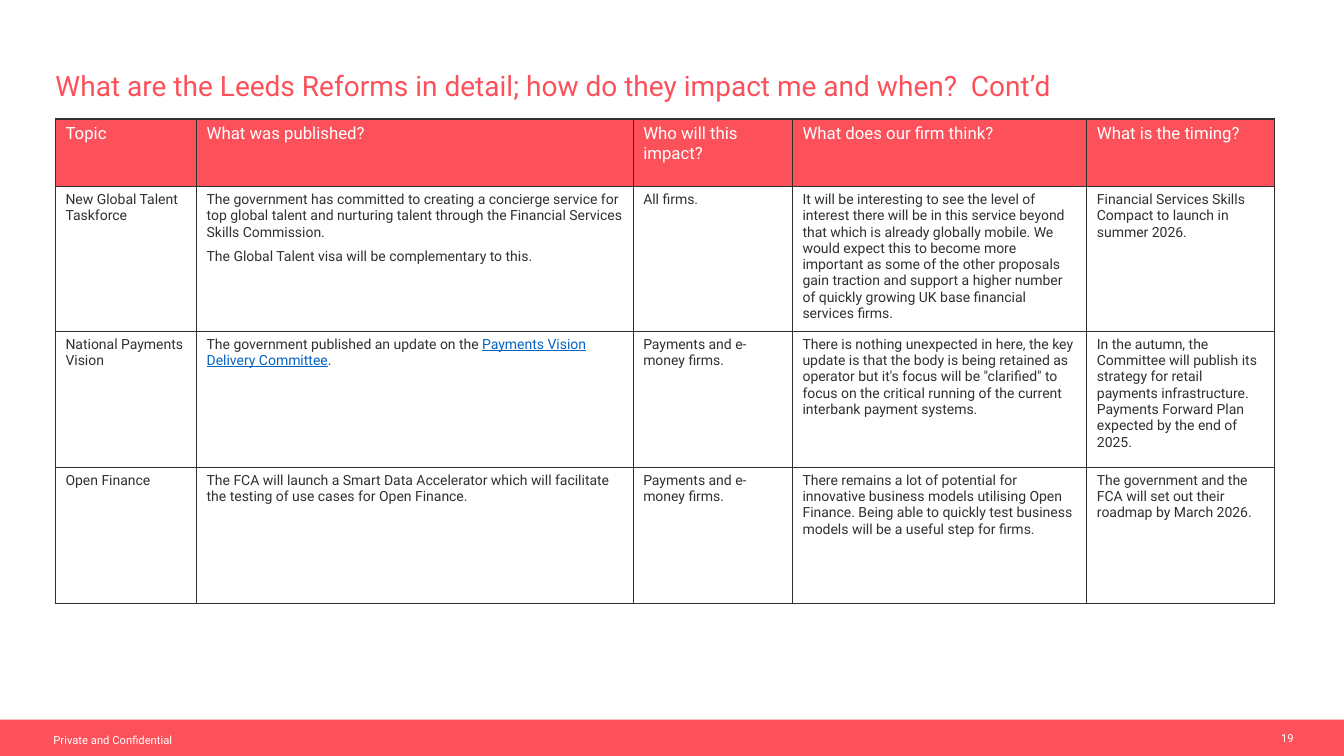
from lxml import etree
from pptx import Presentation
from pptx import util as u
from pptx.dml.color import RGBColor
from pptx.enum import shapes, text
from pptx.oxml import ns

CORAL = RGBColor(0xFC, 0x51, 0x5B)
WHITE = RGBColor(0xFF, 0xFF, 0xFF)
INK = RGBColor(0x30, 0x30, 0x30)
BLUE = RGBColor(0x05, 0x63, 0xC1)

TITLE = "What are the Leeds Reforms in detail; how do they impact me and when?  Cont’d"
FOOTER = "Private and Confidential"
PAGE = "19"

HEADS = ["Topic", "What was published?", "Who will this impact?",
         "What does our firm think?", "What is the timing?"]
LINK = "Payments Vision Delivery Committee"
# Each cell is a list of paragraphs
TOPICS = [
    [["New Global Talent Taskforce"],
     ["The government has committed to creating a concierge service for top global "
      "talent and nurturing talent through the Financial Services Skills Commission.",
      "The Global Talent visa will be complementary to this."],
     ["All firms."],
     ["It will be interesting to see the level of interest there will be in this service "
      "beyond that which is already globally mobile. We would expect this to become more "
      "important as some of the other proposals gain traction and support a higher number "
      "of quickly growing UK base financial services firms."],
     ["Financial Services Skills Compact to launch in summer 2026."]],
    [["National Payments Vision"],
     [f"The government published an update on the {LINK}."],
     ["Payments and e-money firms."],
     ["There is nothing unexpected in here, the key update is that the body is being retained "
      "as operator but it's focus will be \"clarified\" to focus on the critical running "
      "of the current interbank payment systems."],
     ["In the autumn, the Committee will publish its strategy for retail payments "
      "infrastructure.",
      "Payments Forward Plan expected by the end of 2025."]],
    [["Open Finance"],
     ["The FCA will launch a Smart Data Accelerator which will facilitate the testing of "
      "use cases for Open Finance."],
     ["Payments and e-money firms."],
     ["There remains a lot of potential for innovative business models utilising Open "
      "Finance. Being able to quickly test business models will be a useful step for firms."],
     ["The government and the FCA will set out their roadmap by March 2026."]],
]
WIDTHS = [1.4, 4.33, 1.58, 2.92, 1.86]
HEIGHTS = [0.67, 1.29, 1.35, 1.35]

HEAD = {"size": u.Pt(12), "color": WHITE}
BODY = {"size": u.Pt(10), "color": INK}
LINKED = {**BODY, "color": BLUE, "underline": True}
SMALL = {"size": u.Pt(8), "color": WHITE}
LARGE = {"size": u.Pt(20), "color": CORAL}


def box(*sides):
    return [u.Inches(side) for side in sides]


def add_run(para, words, style):
    run = para.add_run()
    run.text = words
    for key, value in {"name": "Roboto", **style}.items():
        if key == "color":
            run.font.color.rgb = value
        else:
            setattr(run.font, key, value)


def set_frame(frame, words, style, inset, **form):
    """Fill a text frame with one line; inset is left, top, right, bottom."""
    names = ("margin_left", "margin_top", "margin_right", "margin_bottom")
    form = {"word_wrap": True, **dict(zip(names, box(*inset))), **form}
    for key, value in form.items():
        setattr(frame, key, value)
    add_run(frame.paragraphs[0], words, style)


def add_edges(cell):
    """Draw a thin dark line on all four sides of a cell."""
    props = cell._tc.get_or_add_tcPr()
    for spot, side in enumerate(("lnL", "lnR", "lnT", "lnB")):
        line = etree.Element(ns.qn(f"a:{side}"), w=str(u.Pt(1)))
        fill = etree.SubElement(line, ns.qn("a:solidFill"))
        etree.SubElement(fill, ns.qn("a:srgbClr"), val=str(INK))
        props.insert(spot, line)


def fill_cell(cell, paras, style, gap=0):
    frame = cell.text_frame
    for spot, words in enumerate(paras):
        para = frame.add_paragraph() if spot else frame.paragraphs[0]
        if gap:
            para.space_after = u.Pt(gap)
        before, link, after = words.partition(LINK)
        for part, look in ((before, style), (link, LINKED), (after, style)):
            if part:
                add_run(para, part, look)
    add_edges(cell)


def add_grid(slide):
    rows = [[[head] for head in HEADS]] + TOPICS
    place = box(0.55, 1.18, sum(WIDTHS), sum(HEIGHTS))
    grid = slide.shapes.add_table(len(rows), len(HEADS), *place).table
    grid.first_row = grid.horz_banding = False
    for col, width in zip(grid.columns, WIDTHS):
        col.width = u.Inches(width)
    for r, (row, height) in enumerate(zip(rows, HEIGHTS)):
        grid.rows[r].height = u.Inches(height)
        for c, paras in enumerate(row):
            cell = grid.cell(r, c)
            if r == 0:
                cell.fill.solid()
                cell.fill.fore_color.rgb = CORAL
            else:
                cell.fill.background()
            fill_cell(cell, paras, BODY if r else HEAD, 6 if len(paras) > 1 and r == 1 else 0)


def main():
    deck = Presentation()
    deck.slide_width, deck.slide_height = box(13.33, 7.5)
    slide = deck.slides.add_slide(deck.slide_layouts[5])

    band = slide.shapes.add_shape(shapes.MSO_SHAPE.RECTANGLE, *box(0, 7.14, 13.33, 0.36))
    band.shadow.inherit = False
    band.fill.solid()
    band.fill.fore_color.rgb = CORAL
    band.line.fill.background()

    note = slide.shapes.add_textbox(*box(0.53, 7.28, 1.88, 0.13))
    set_frame(note.text_frame, FOOTER, SMALL, (0, 0, 0, 0))
    page = slide.shapes.add_textbox(*box(12.38, 7.18, 0.55, 0.29))
    set_frame(page.text_frame, PAGE, SMALL, (0.1, 0.05, 0.1, 0.05),
              vertical_anchor=text.MSO_ANCHOR.MIDDLE)
    page.text_frame.paragraphs[0].alignment = text.PP_ALIGN.RIGHT

    title = slide.shapes.title
    title.left, title.top, title.width, title.height = box(0.55, 0.63, 12.22, 0.44)
    set_frame(title.text_frame, TITLE, LARGE, (0, 0.05, 0.05, 0.05),
              vertical_anchor=text.MSO_ANCHOR.TOP, auto_size=text.MSO_AUTO_SIZE.NONE)
    title.text_frame.paragraphs[0].alignment = text.PP_ALIGN.LEFT

    add_grid(slide)
    deck.save("out.pptx")


if __name__ == "__main__":
    main()
